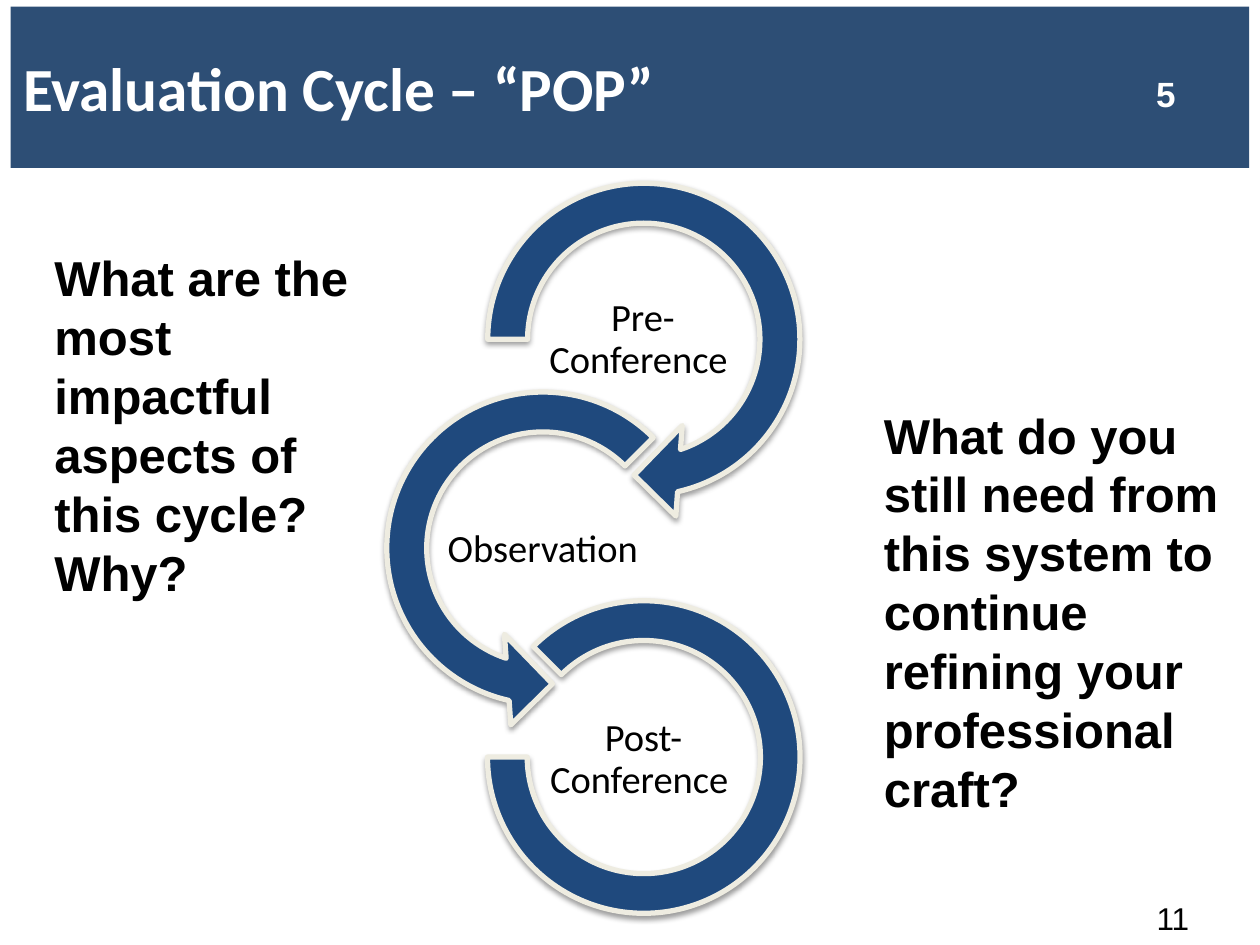
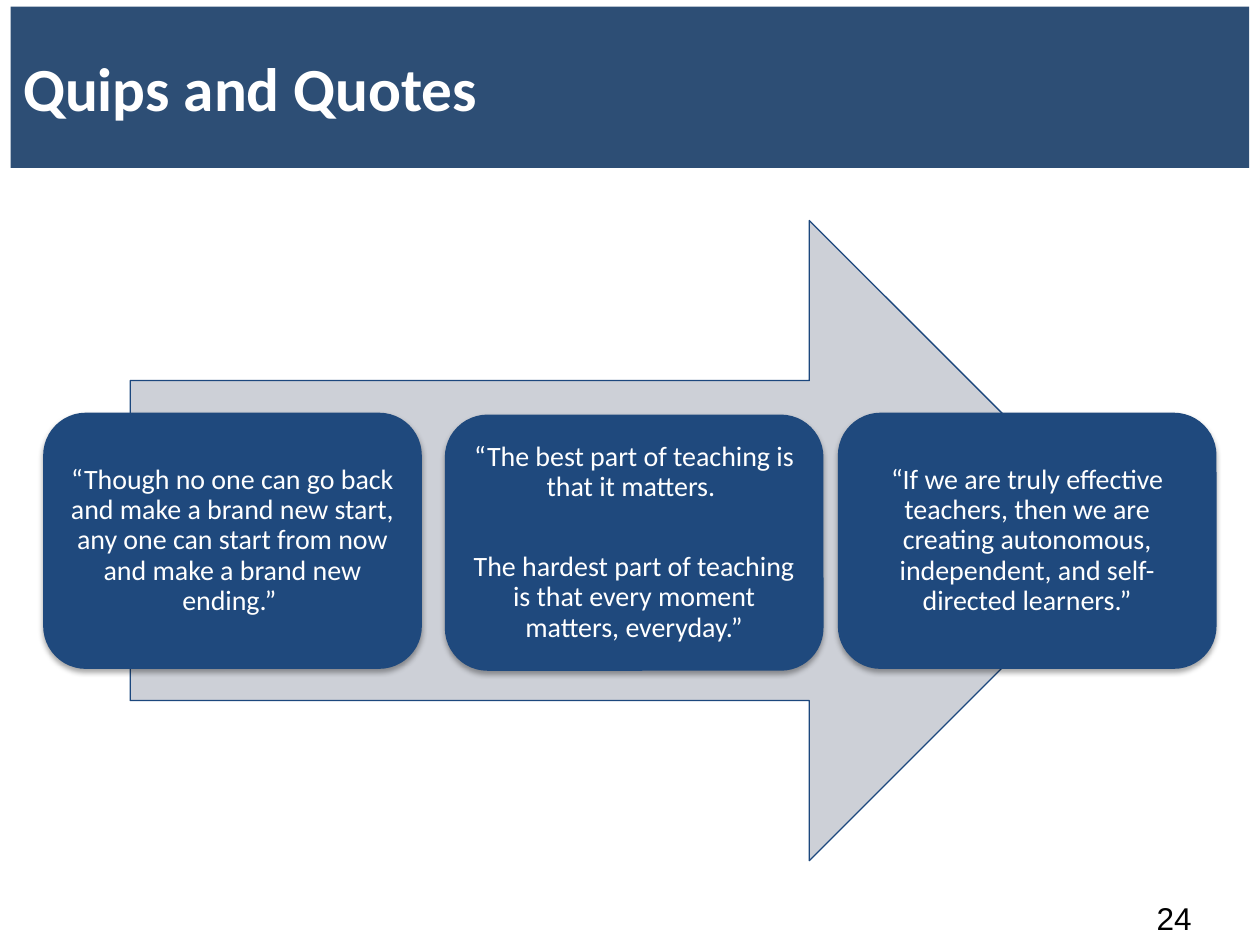
from lxml import etree
from pptx import Presentation
from pptx.dml import color
from pptx.enum import shapes, text
from pptx.oxml import ns
from pptx.util import Pt

BAND = "2D4E75"
NAVY = "1F497D"
CREAM = "EEECE1"
WHITE = "FFFFFF"
BLACK = "000000"
HEADING_FONT = "Calibri"
BODY_FONT = "Arial"
KIND = shapes.MSO_SHAPE


def rgb(value):
    return color.RGBColor.from_string(value)


def place(shape, left, top, width, height):
    shape.left, shape.top = Pt(left), Pt(top)
    shape.width, shape.height = Pt(width), Pt(height)


def write(shape, *paragraphs, font=BODY_FONT, size=28, ink=BLACK, bold=False,
          align=text.PP_ALIGN.LEFT, anchor=text.MSO_ANCHOR.TOP,
          inset=(7.2, 3.6), spacing=None, gap=0, wrap=True):
    """Fill a shape with paragraphs; gap is the space between them."""
    frame = shape.text_frame
    frame.auto_size = text.MSO_AUTO_SIZE.NONE
    frame.word_wrap = wrap
    frame.vertical_anchor = anchor
    frame.margin_left = frame.margin_right = Pt(inset[0])
    frame.margin_top = frame.margin_bottom = Pt(inset[1])
    for index, wording in enumerate(paragraphs):
        paragraph = frame.add_paragraph() if index else frame.paragraphs[0]
        paragraph.alignment = align
        if spacing:
            paragraph.line_spacing = spacing
        if index and gap:
            paragraph.space_before = Pt(gap)
        run = paragraph.add_run()
        run.text = wording
        run.font.name, run.font.size, run.font.bold = font, Pt(size), bold
        run.font.color.rgb = rgb(ink)


def add_text(slide, box, *paragraphs, **style):
    label = slide.shapes.add_textbox(*map(Pt, box))
    write(label, *paragraphs, **style)


def add_figure(slide, kind, box, fill, line=None, line_width=0.75, adjust=()):
    figure = slide.shapes.add_shape(kind, *map(Pt, box))
    figure.shadow.inherit = False
    figure.fill.solid()
    figure.fill.fore_color.rgb = rgb(fill)
    if line:
        figure.line.color.rgb = rgb(line)
        figure.line.width = Pt(line_width)
    else:
        figure.line.fill.background()
    for index, value in enumerate(adjust):
        figure.adjustments[index] = value
    return figure


def drop_shadow(figure, opacity, distance):
    effects = figure._element.spPr.find(ns.qn("a:effectLst"))
    shadow = etree.SubElement(
        effects, ns.qn("a:outerShdw"), blurRad=str(Pt(3.1)),
        dist=str(Pt(distance)), dir="5400000", rotWithShape="0")
    tint = etree.SubElement(shadow, ns.qn("a:srgbClr"), val=BLACK)
    etree.SubElement(tint, ns.qn("a:alpha"), val=str(opacity * 1000))


def add_titled_slide(deck, heading, number):
    slide = deck.slides.add_slide(deck.slide_layouts[5])
    title = slide.shapes.title
    place(title, 6, 3.75, 707.8, 92.25)
    title.fill.solid()
    title.fill.fore_color.rgb = rgb(BAND)
    write(title, heading, font=HEADING_FONT, size=35, ink=WHITE, bold=True,
          anchor=text.MSO_ANCHOR.MIDDLE)
    add_text(slide, (653.8, 510.2, 36.7, 28.8), number, size=18, wrap=False)
    return slide


def add_stage(slide, kind, corner, diameter, adjust, name, name_corner):
    """One curved step of the cycle with its name inside."""
    ring = add_figure(slide, kind, (*corner, diameter, diameter), NAVY,
                      line=CREAM, line_width=3, adjust=adjust)
    drop_shadow(ring, opacity=38, distance=1.6)
    add_text(slide, (*name_corner, 115.2, 57.6), name, font=HEADING_FONT,
             size=22, align=text.PP_ALIGN.CENTER,
             anchor=text.MSO_ANCHOR.MIDDLE, inset=(1.4, 1.4), spacing=0.9)


def add_quote(slide, left, top, *sentences):
    card = add_figure(slide, KIND.ROUNDED_RECTANGLE, (left, top, 216.4, 146.4),
                      NAVY, adjust=[0.1667])
    drop_shadow(card, opacity=35, distance=1.8)
    write(card, *sentences, font=HEADING_FONT, size=16, ink=WHITE,
          align=text.PP_ALIGN.CENTER, anchor=text.MSO_ANCHOR.MIDDLE,
          inset=(5, 5), spacing=0.9, gap=28.5)


def build_cycle(deck):
    slide = add_titled_slide(deck, "Evaluation Cycle – “POP”", "11")
    add_text(slide, (653.6, 37.8, 48, 31.7), "5", size=20, ink=WHITE, bold=True)
    stages = [
        (KIND.CIRCULAR_ARROW, (264.2, 90.2), 207.4,
         (0.11, 11.423, 45, 108, 0.125), "Pre-Conference ", (309.8, 165.4)),
        (KIND.LEFT_CIRCULAR_ARROW, (206.5, 209.5), 207.4,
         (0.11, 11.423, 63, 189, 0.125), "Observation", (252.6, 285.4)),
        (KIND.BLOCK_ARC, (278.6, 343.3), 178.6,
         (135, 108, 0.127), "Post-Conference ", (310.1, 405.4)),
    ]
    for stage in stages:
        add_stage(slide, *stage)
    add_text(slide, (24, 138.2, 185.8, 211),
             "What are the most impactful aspects of this cycle?", "Why?",
             bold=True)
    add_text(slide, (498, 228, 210.2, 244.8),
             "What do you still need from this system to continue refining "
             "your professional craft?", bold=True)


def build_quotes(deck):
    slide = add_titled_slide(deck, "Quips and Quotes", "24")
    add_figure(slide, KIND.RIGHT_ARROW, (74.4, 126, 571, 365.8), "CDD0D7",
               line="1C477D")
    add_quote(slide, 24.7, 235.8,
              "“Though no one can go back and make a brand new start, any one "
              "can start from now and make a brand new ending.” ")
    add_quote(slide, 254.2, 236.9,
              "“The best part of teaching is that it matters. ",
              "The hardest part of teaching is that every moment matters, "
              "everyday.”")
    add_quote(slide, 478.8, 235.8,
              "“If we are truly effective teachers, then we are creating "
              "autonomous, independent, and self-directed learners.”")


def main():
    deck = Presentation()
    deck.slide_width, deck.slide_height = Pt(720), Pt(540)
    build_cycle(deck)
    build_quotes(deck)
    deck.save("out.pptx")


if __name__ == "__main__":
    main()
